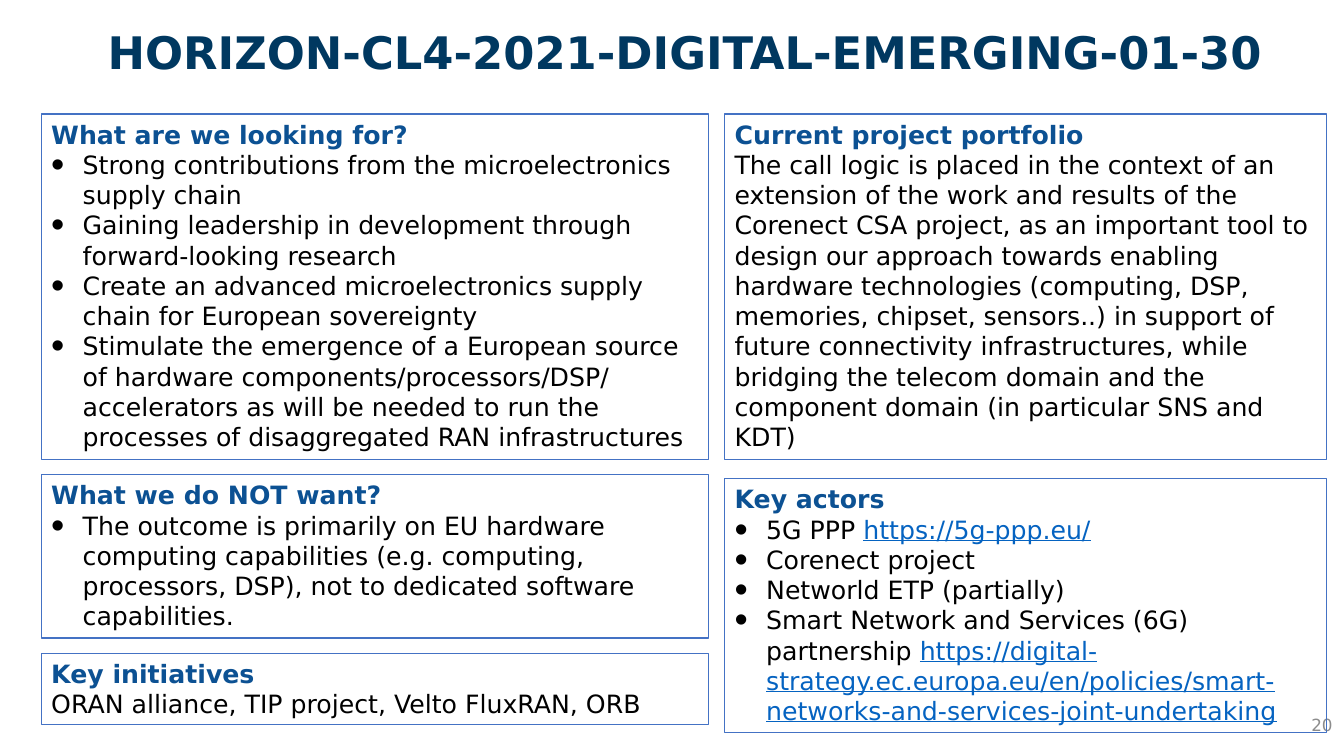
from dataclasses import dataclass

import lxml.etree
import pptx
import pptx.dml.color
import pptx.enum.shapes
import pptx.enum.text
import pptx.oxml.ns
import pptx.util

Pt = pptx.util.Pt
Align = pptx.enum.text.PP_ALIGN
Anchor = pptx.enum.text.MSO_ANCHOR
AutoSize = pptx.enum.text.MSO_AUTO_SIZE

FONT = "DejaVu Sans"
BLACK = "000000"
BORDER = "4472C4"
BULLET_INDENT = 22.5
LEFT, LEFT_WIDTH = 29.5, 476.6
RIGHT, RIGHT_WIDTH = 517.7, 429.8
TOP, TOP_HEIGHT = 81.4, 247

HEADING = {"size": Pt(18), "bold": True, "color": "0C5193"}
BODY = {"size": Pt(18), "bold": False, "color": BLACK}
ADDRESS = {"size": Pt(18), "underline": True, "color": "0563C1"}
TITLE = {"size": Pt(32), "bold": True, "color": "003860"}
NUMBER = {"size": Pt(12), "color": "8C8C8C"}


@dataclass
class Line:
    text: str
    address: str = ""
    bullet: bool = True


@dataclass
class Panel:
    left: float
    top: float
    width: float
    height: float
    heading: str
    lines: list[Line]


PANELS = [
    Panel(LEFT, TOP, LEFT_WIDTH, TOP_HEIGHT, "What are we looking for?", [
        Line("Strong contributions from the microelectronics supply chain"),
        Line("Gaining leadership in development through forward-looking research"),
        Line("Create an advanced microelectronics supply chain for European sovereignty"),
        Line("Stimulate the emergence of a European source of hardware "
             "components/processors/DSP/ accelerators as will be needed to run the "
             "processes of disaggregated RAN infrastructures"),
    ]),
    Panel(LEFT, 339.1, LEFT_WIDTH, 116.6, "What we do NOT want?", [
        Line("The outcome is primarily on EU hardware computing capabilities "
             "(e.g. computing, processors, DSP), not to dedicated software capabilities."),
    ]),
    Panel(LEFT, 466.6, LEFT_WIDTH, 51.1, "Key initiatives", [
        Line("ORAN alliance, TIP project, Velto FluxRAN, ORB", bullet=False),
    ]),
    Panel(RIGHT, TOP, RIGHT_WIDTH, TOP_HEIGHT, "Current project portfolio", [
        Line("The call logic is placed in the context of an extension of the work and "
             "results of the Corenect CSA project, as an important tool to design our "
             "approach towards enabling hardware technologies (computing, DSP, memories, "
             "chipset, sensors..) in support of future connectivity infrastructures, "
             "while bridging the telecom domain and the component domain "
             "(in particular SNS and KDT)", bullet=False),
    ]),
    Panel(RIGHT, 342, RIGHT_WIDTH, 181.4, "Key actors", [
        Line("5G PPP ", "https://5g-ppp.eu/"),
        Line("Corenect project"),
        Line("Networld ETP (partially)"),
        Line("Smart Network and Services (6G) partnership ",
             "https://digital-strategy.ec.europa.eu/en/policies/"
             "smart-networks-and-services-joint-undertaking"),
    ]),
]


def color(value: str) -> pptx.dml.color.RGBColor:
    return pptx.dml.color.RGBColor.from_string(value)


def add_span(para, text: str, style: dict) -> None:
    span = para.add_run()
    span.text = text
    span.font.name = FONT
    for name, value in style.items():
        if name == "color":
            span.font.color.rgb = color(value)
        else:
            setattr(span.font, name, value)


def add_bullet(para) -> None:
    properties = para._p.get_or_add_pPr()
    properties.set("marL", str(Pt(BULLET_INDENT)))
    properties.set("indent", str(-Pt(BULLET_INDENT)))
    for tag, name, value in (("a:buSzPct", "val", "150000"),
                             ("a:buFont", "typeface", "Arial"),
                             ("a:buChar", "char", "•")):
        element = lxml.etree.SubElement(properties, pptx.oxml.ns.qn(tag))
        element.set(name, value)


def add_panel(page, panel: Panel) -> None:
    box = page.shapes.add_shape(
        pptx.enum.shapes.MSO_SHAPE.RECTANGLE,
        Pt(panel.left), Pt(panel.top), Pt(panel.width), Pt(panel.height))
    box.shadow.inherit = False
    box.fill.background()
    box.line.color.rgb = color(BORDER)
    box.line.width = Pt(1)
    frame = box.text_frame
    frame.word_wrap = True
    frame.auto_size = AutoSize.SHAPE_TO_FIT_TEXT
    frame.vertical_anchor = Anchor.TOP
    heading = frame.paragraphs[0]
    heading.alignment = Align.LEFT
    add_span(heading, panel.heading, HEADING)
    for line in panel.lines:
        para = frame.add_paragraph()
        para.alignment = Align.LEFT
        if line.bullet:
            add_bullet(para)
        add_span(para, line.text, BODY)
        if line.address:
            add_span(para, line.address, ADDRESS)


def add_label(page, left: float, top: float, width: float, height: float,
              text: str, style: dict, frame_format: dict, alignment: Align) -> None:
    box = page.shapes.add_textbox(Pt(left), Pt(top), Pt(width), Pt(height))
    for name, value in frame_format.items():
        setattr(box.text_frame, name, value)
    para = box.text_frame.paragraphs[0]
    para.alignment = alignment
    add_span(para, text, style)


def main() -> None:
    deck = pptx.Presentation()
    deck.slide_width, deck.slide_height = Pt(960), Pt(540)
    page = deck.slides.add_slide(deck.slide_layouts[6])
    add_label(page, 743, 503.3, 216, 28.8, "20", NUMBER,
              {"word_wrap": True, "vertical_anchor": Anchor.MIDDLE}, Align.RIGHT)
    add_label(page, 69.8, 14.4, 887, 46.1, "HORIZON-CL4-2021-DIGITAL-EMERGING-01-30", TITLE,
              {"word_wrap": False, "auto_size": AutoSize.SHAPE_TO_FIT_TEXT}, Align.LEFT)
    for panel in PANELS:
        add_panel(page, panel)
    deck.save("out.pptx")


if __name__ == "__main__":
    main()
